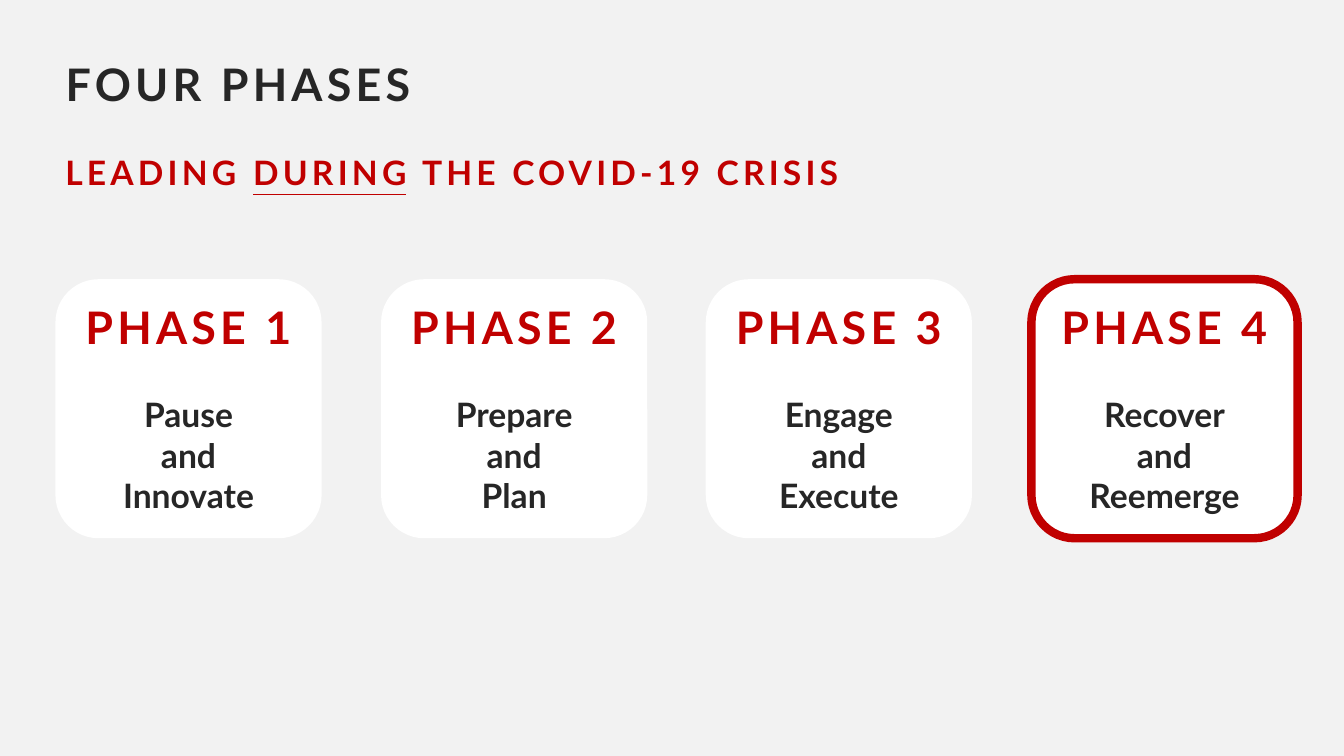
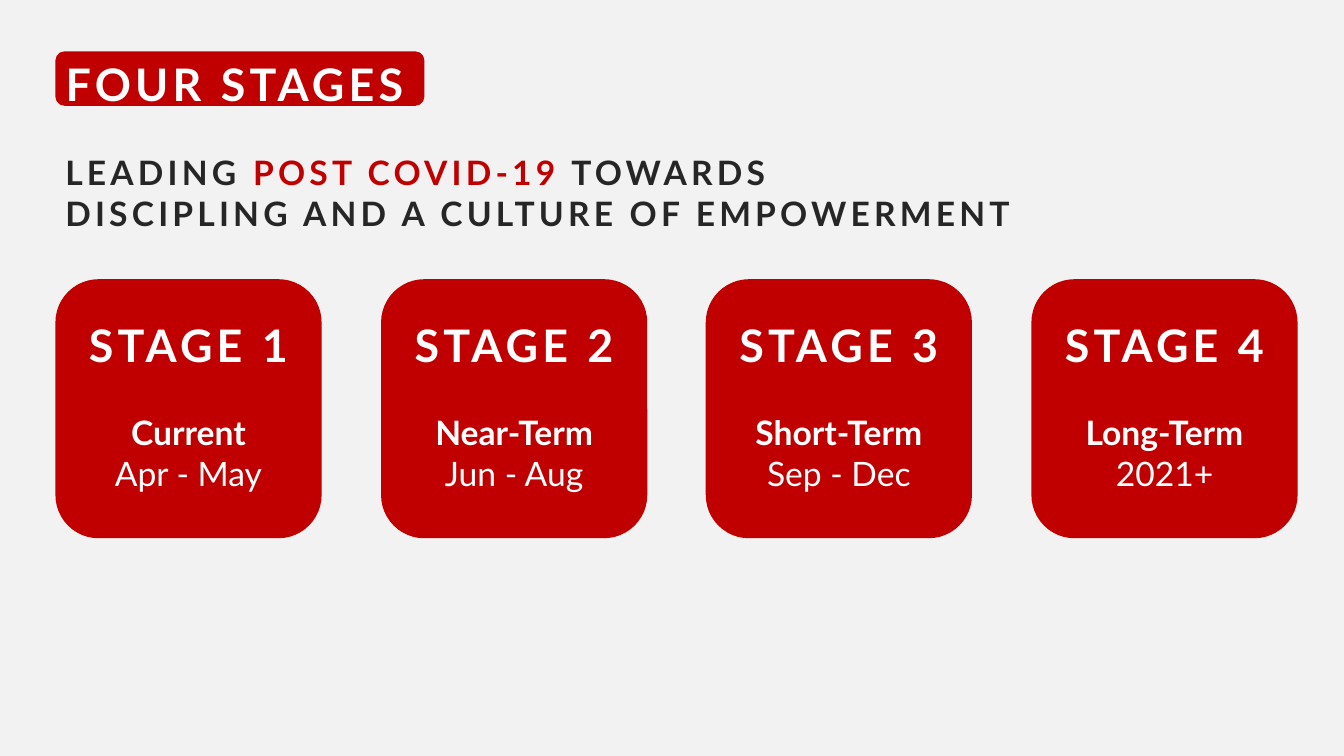
from pptx import Presentation
from pptx.dml.color import RGBColor
from pptx.enum.shapes import MSO_SHAPE
from pptx.enum.text import MSO_ANCHOR, MSO_AUTO_SIZE, PP_ALIGN
from pptx.util import Emu, Pt

ROUNDED = MSO_SHAPE.ROUNDED_RECTANGLE
TOP = MSO_ANCHOR.TOP
NO_AUTOFIT = MSO_AUTO_SIZE.NONE
LEFT, CENTER = PP_ALIGN.LEFT, PP_ALIGN.CENTER

# Shared look: 100 px to the inch
EMU_PER_PX = 9144
SLIDE_W, SLIDE_H = 1333, 750
TITLE_ONLY = 5
FONT = "Lato"
COLORS = {"page": "F2F2F2", "red": "C00000", "ink": "262626", "white": "FFFFFF"}
HEADING_PT, BODY_PT, TRACKING_PT = 32, 24, 3
BODY_GAP_PT = 29

# Card row
MARGIN = 55
CARD_TOP, CARD_W, CARD_H = 277, 264, 257
LAST_CARD_LEFT = 1023

PHASES = [
    ("PHASE 1", ["Pause", "and", "Innovate"]),
    ("PHASE 2", ["Prepare", "and", "Plan"]),
    ("PHASE 3", ["Engage", "and", "Execute"]),
    ("PHASE 4", ["Recover", "and", "Reemerge"]),
]
STAGES = [
    ("STAGE 1", "Current", "Apr - May"),
    ("STAGE 2", "Near-Term", "Jun - Aug"),
    ("STAGE 3", "Short-Term", "Sep - Dec"),
    ("STAGE 4", "Long-Term", "2021+"),
]


def px(length):
    return Emu(length * EMU_PER_PX)


def rgb(color):
    return RGBColor.from_string(COLORS[color])


def add_run(paragraph, text, size, color, bold=True, tracking=0, underline=None):
    run = paragraph.add_run()
    run.text = text
    font = run.font
    font.name, font.size, font.bold = FONT, Pt(size), bold
    font.underline = underline
    font.color.rgb = rgb(color)
    run._r.get_or_add_rPr().set("spc", str(tracking * 100))


def next_paragraph(frame, is_first, align):
    paragraph = frame.paragraphs[0] if is_first else frame.add_paragraph()
    paragraph.alignment = align
    return paragraph


def set_frame(frame, side, top):
    frame.word_wrap = True
    frame.auto_size = NO_AUTOFIT
    frame.vertical_anchor = TOP
    frame.margin_left = frame.margin_right = px(side)
    frame.margin_top = frame.margin_bottom = px(top)


def add_rounded(slide, left, top, width, height, fill, outline=None):
    shape = slide.shapes.add_shape(ROUNDED, px(left), px(top), px(width), px(height))
    shape.shadow.inherit = False
    shape.fill.solid()
    shape.fill.fore_color.rgb = rgb(fill)
    if outline:
        shape.line.color.rgb = rgb(outline)
        shape.line.width = Pt(6)
    else:
        shape.line.fill.background()
    return shape


def add_title(slide, text, color):
    title = slide.shapes.title
    title.left, title.top = px(MARGIN), px(51)
    title.width, title.height = px(SLIDE_W - MARGIN), px(64)
    set_frame(title.text_frame, 10, 5)
    heading = next_paragraph(title.text_frame, True, LEFT)
    add_run(heading, text, HEADING_PT, color, tracking=TRACKING_PT)


def add_title_badge(slide):
    badge = add_rounded(slide, MARGIN, 51, 366, 54, "red")
    # Place the badge behind the title
    slide.shapes.title._element.addprevious(badge._element)


def add_subtitle(slide, lines):
    """Each line is a list of (text, color, underline) pieces."""
    subtitle = slide.shapes.add_textbox(px(MARGIN), px(146), px(1196), px(10 + 40 * len(lines)))
    set_frame(subtitle.text_frame, 10, 5)
    for index, pieces in enumerate(lines):
        paragraph = next_paragraph(subtitle.text_frame, index == 0, LEFT)
        for text, color, underline in pieces:
            add_run(paragraph, text, BODY_PT, color, tracking=TRACKING_PT, underline=underline)


def add_card(slide, position, heading, body, colors, text_top, outline=None):
    """colors is (fill, heading, body); body is a list of (text, bold) lines."""
    fill, heading_color, body_color = colors
    left = round(MARGIN + position * (LAST_CARD_LEFT - MARGIN) / 3)
    card = add_rounded(slide, left, CARD_TOP, CARD_W, CARD_H, fill, outline)
    frame = card.text_frame
    set_frame(frame, 0, text_top)
    add_run(next_paragraph(frame, True, CENTER), heading, HEADING_PT,
            heading_color, tracking=TRACKING_PT)
    for index, (text, bold) in enumerate(body):
        line = next_paragraph(frame, False, CENTER)
        if index == 0:
            line.space_before = Pt(BODY_GAP_PT)
        add_run(line, text, BODY_PT, body_color, bold)


def build_phases(slide):
    add_title(slide, "FOUR PHASES", "ink")
    add_subtitle(slide, [[("LEADING ", "red", None), ("DURING", "red", True),
                          (" THE COVID-19 CRISIS", "red", None)]])
    for position, (heading, words) in enumerate(PHASES):
        outline = "red" if position == len(PHASES) - 1 else None
        add_card(slide, position, heading, [(word, True) for word in words],
                 ("white", "red", "ink"), 8, outline)


def build_stages(slide):
    add_title_badge(slide)
    add_title(slide, "FOUR STAGES", "white")
    add_subtitle(slide, [
        [("LEADING ", "ink", None), ("POST COVID-19", "red", None), (" TOWARDS", "ink", None)],
        [("DISCIPLING AND A CULTURE OF EMPOWERMENT", "ink", None)],
    ])
    for position, (heading, term, months) in enumerate(STAGES):
        add_card(slide, position, heading, [(term, True), (months, False)],
                 ("red", "white", "white"), 26)


def main():
    prs = Presentation()
    prs.slide_width, prs.slide_height = px(SLIDE_W), px(SLIDE_H)
    page = prs.slide_master.background.fill
    page.solid()
    page.fore_color.rgb = rgb("page")
    for build in (build_phases, build_stages):
        build(prs.slides.add_slide(prs.slide_layouts[TITLE_ONLY]))
    prs.save("out.pptx")


if __name__ == "__main__":
    main()
